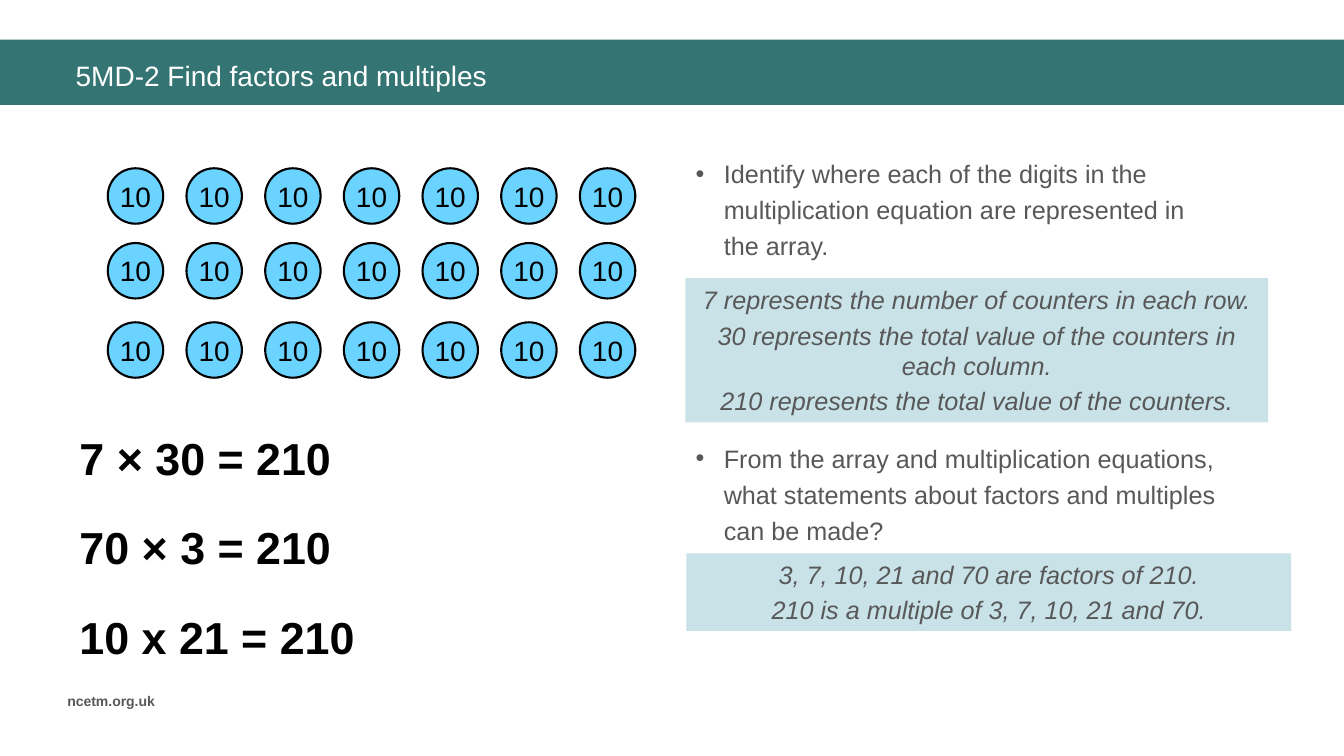
from dataclasses import dataclass

from pptx import Presentation
from pptx import util as u
from pptx.dml import color
from pptx.enum import shapes, text
from pptx.shapes.autoshape import Shape
from pptx.slide import Slide
from pptx.text.text import TextFrame

COLOURS = {
    "band": "347574",
    "white": "FFFFFF",
    "grey": "585858",
    "black": "000000",
    "counter": "6BD3FF",
    "answer": "C8E2E8",
}
ROW_TOPS = (120.2, 173.6, 230.2)
COLUMNS = 7
COLUMN_LEFT = 77
COLUMN_STEP = 56.2
COUNTER_SIZE = 39.6


@dataclass(frozen=True)
class Area:
    left: float
    top: float
    width: float
    height: float

    def lengths(self) -> tuple[u.Pt, ...]:
        return tuple(u.Pt(n) for n in (self.left, self.top, self.width, self.height))


@dataclass(frozen=True)
class Style:
    size: float
    colour: str
    bold: bool = False
    italic: bool = False
    align: text.PP_ALIGN = text.PP_ALIGN.LEFT


@dataclass(frozen=True)
class Label:
    wording: str
    area: Area
    style: Style


@dataclass(frozen=True)
class Answer:
    lines: tuple[str, ...]
    area: Area


TITLE_STYLE = Style(20, "white")
BODY_STYLE = Style(18, "grey")
FOOTER_STYLE = Style(10, "grey", bold=True)
EQUATION_STYLE = Style(32, "black", bold=True)
COUNTER_STYLE = Style(20, "black", align=text.PP_ALIGN.CENTER)
ANSWER_STYLE = Style(18, "grey", italic=True, align=text.PP_ALIGN.CENTER)

EQUATIONS = ("7 × 30 = 210", "70 × 3 = 210", "10 x 21 = 210")
LABELS = [Label("ncetm.org.uk", Area(41, 491, 87, 19.4), FOOTER_STYLE)] + [
    Label(equation, Area(49.7, 303.8 + 64.1 * row, 216, 46.1), EQUATION_STYLE)
    for row, equation in enumerate(EQUATIONS)
]
QUESTIONS = (
    "Identify where each of the digits in the multiplication equation are represented in the array.",
    "From the array and multiplication equations, what statements about factors and multiples can be made?",
)
ANSWERS = (
    Answer(
        (
            "7 represents the number of counters in each row.",
            "30 represents the total value of the counters in each column.",
            "210 represents the total value of the counters.",
        ),
        Area(489.6, 198.7, 416.2, 103),
    ),
    Answer(
        (
            "3, 7, 10, 21 and 70 are factors of 210.",
            "210 is a multiple of 3, 7, 10, 21 and 70.",
        ),
        Area(490.3, 395.3, 432, 55.4),
    ),
)


def rgb(name: str) -> color.RGBColor:
    return color.RGBColor.from_string(COLOURS[name])


def write(frame: TextFrame, lines: tuple[str, ...], style: Style, gap: float = 0) -> None:
    frame.word_wrap = True
    frame.auto_size = text.MSO_AUTO_SIZE.NONE
    frame.text = "\n".join(lines)
    for index, paragraph in enumerate(frame.paragraphs):
        paragraph.alignment = style.align
        paragraph.space_before = u.Pt(gap if index else 0)
        font = paragraph.font
        font.name = "Arial"
        font.size = u.Pt(style.size)
        font.bold = style.bold
        font.italic = style.italic
        font.color.rgb = rgb(style.colour)


def place(shape: Shape, area: Area) -> None:
    shape.left, shape.top, shape.width, shape.height = area.lengths()


def add_filled(page: Slide, kind: shapes.MSO_SHAPE, area: Area, fill: str) -> Shape:
    shape = page.shapes.add_shape(kind, *area.lengths())
    shape.shadow.inherit = False
    shape.fill.solid()
    shape.fill.fore_color.rgb = rgb(fill)
    shape.line.fill.background()
    shape.text_frame.vertical_anchor = text.MSO_ANCHOR.MIDDLE
    return shape


def add_title(page: Slide) -> None:
    title = page.shapes.title
    place(title, Area(46.8, 36.7, 887, 33.8))
    write(title.text_frame, ("5MD-2 Find factors and multiples",), TITLE_STYLE)
    title.text_frame.vertical_anchor = text.MSO_ANCHOR.MIDDLE
    band = add_filled(page, shapes.MSO_SHAPE.RECTANGLE, Area(0, 28.3, 960, 46.7), "band")
    title.element.addprevious(band.element)


def add_questions(page: Slide) -> None:
    body = page.placeholders[1]
    place(body, Area(489.6, 105.1, 393.1, 323.3))
    write(body.text_frame, QUESTIONS, BODY_STYLE, gap=119.6)
    body.text_frame.vertical_anchor = text.MSO_ANCHOR.TOP
    for paragraph in body.text_frame.paragraphs:
        paragraph.line_spacing = 1.2
        paragraph.space_after = u.Pt(6)
        properties = paragraph._p.get_or_add_pPr()
        properties.set("marL", str(u.Pt(20.2)))
        properties.set("indent", str(u.Pt(-20.2)))


def add_label(page: Slide, label: Label) -> None:
    box = page.shapes.add_textbox(*label.area.lengths())
    write(box.text_frame, (label.wording,), label.style)


def add_counter(page: Slide, left: float, top: float) -> None:
    area = Area(left, top, COUNTER_SIZE, COUNTER_SIZE)
    counter = add_filled(page, shapes.MSO_SHAPE.OVAL, area, "counter")
    counter.line.color.rgb = rgb("black")
    counter.line.width = u.Pt(1.5)
    frame = counter.text_frame
    frame.margin_left = frame.margin_right = u.Pt(0)
    frame.margin_top = frame.margin_bottom = u.Pt(0)
    write(frame, ("10",), COUNTER_STYLE)


def add_answer(page: Slide, answer: Answer) -> None:
    box = add_filled(page, shapes.MSO_SHAPE.RECTANGLE, answer.area, "answer")
    write(box.text_frame, answer.lines, ANSWER_STYLE, gap=3.6)


def main() -> None:
    deck = Presentation()
    deck.slide_width, deck.slide_height = u.Pt(960), u.Pt(540)
    page = deck.slides.add_slide(deck.slide_layouts[1])
    add_title(page)
    add_questions(page)
    for label in LABELS:
        add_label(page, label)
    for top in ROW_TOPS:
        for column in range(COLUMNS):
            add_counter(page, COLUMN_LEFT + COLUMN_STEP * column, top)
    for answer in ANSWERS:
        add_answer(page, answer)
    deck.save("out.pptx")


if __name__ == "__main__":
    main()
